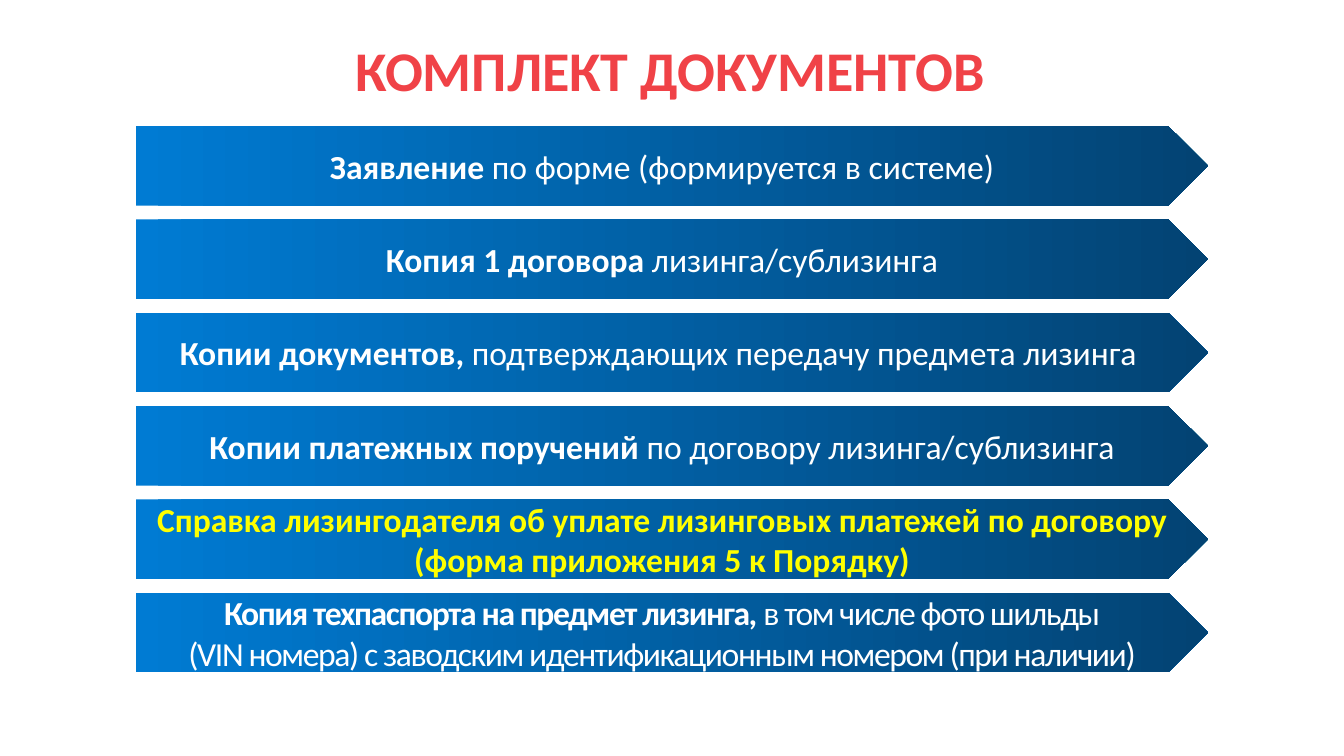
import dataclasses
import typing

import pptx
import pptx.dml.color
import pptx.enum.shapes
import pptx.enum.text
import pptx.slide
import pptx.text.text
import pptx.util

Inches = pptx.util.Inches


@dataclasses.dataclass(frozen=True)
class Theme:
    font: str = "Calibri"
    title: str = "F04247"
    text: str = "FFFFFF"
    accent: str = "FFFF00"
    start: str = "007BD3"
    end: str = "034373"
    large: int = 40
    body: int = 24


class Part(typing.NamedTuple):
    text: str
    bold: bool = False


@dataclasses.dataclass(frozen=True)
class Banner:
    lines: list[list[Part]]
    color: str
    track: int = 0  # hundredths of a point


THEME = Theme()
LEFT, TOP, WIDTH, HEIGHT, PITCH = 1.35, 1.25, 10.63, 0.79, 0.926

BANNERS = [
    Banner([[Part("Заявление", True),
             Part(" по форме (формируется в системе)")]], THEME.text),
    Banner([[Part("Копия 1 договора", True),
             Part(" лизинга/сублизинга")]], THEME.text),
    Banner([[Part("Копии документов, ", True),
             Part("подтверждающих передачу предмета лизинга ")]], THEME.text),
    Banner([[Part("Копии платежных поручений", True),
             Part(" по договору лизинга/сублизинга")]], THEME.text),
    Banner([[Part("Справка лизингодателя об уплате лизинговых платежей по договору "
                  "(форма приложения 5 к Порядку)", True)]], THEME.accent),
    Banner([[Part("Копия техпаспорта на предмет лизинга, ", True),
             Part("в том числе фото шильды")],
            [Part("(VIN номера) с заводским идентификационным номером "
                  "(при наличии)")]], THEME.text, -100),
]


def paint(code: str) -> pptx.dml.color.RGBColor:
    return pptx.dml.color.RGBColor.from_string(code)


def write(frame: pptx.text.text.TextFrame, lines: list[list[Part]],
          size: int, color: str, track: int = 0) -> None:
    frame.word_wrap = True
    frame.vertical_anchor = pptx.enum.text.MSO_ANCHOR.MIDDLE
    for row, parts in enumerate(lines):
        para = frame.add_paragraph() if row else frame.paragraphs[0]
        para.alignment = pptx.enum.text.PP_ALIGN.CENTER
        for part in parts:
            run = para.add_run()
            run.text = part.text
            run.font.name = THEME.font
            run.font.size = pptx.util.Pt(size)
            run.font.bold = part.bold
            run.font.color.rgb = paint(color)
            if track:
                run.font._element.set("spc", str(track))


def add_title(slide: pptx.slide.Slide, text: str) -> None:
    box = slide.shapes.add_textbox(
        Inches(-0.02), Inches(0.22), Inches(13.33), Inches(1))
    write(box.text_frame, [[Part(text, True)]], THEME.large, THEME.title)
    box.text_frame.paragraphs[0].line_spacing = 0.96


def add_banner(slide: pptx.slide.Slide, banner: Banner, index: int) -> None:
    shape = slide.shapes.add_shape(
        pptx.enum.shapes.MSO_SHAPE.PENTAGON, Inches(LEFT),
        Inches(TOP + index * PITCH), Inches(WIDTH), Inches(HEIGHT))
    shape.shadow.inherit = False
    shape.line.fill.background()
    shape.fill.gradient()
    shape.fill.gradient_angle = 0
    for stop, color in zip(shape.fill.gradient_stops, (THEME.start, THEME.end)):
        stop.color.rgb = paint(color)
    write(shape.text_frame, banner.lines, THEME.body, banner.color, banner.track)


def main() -> None:
    deck = pptx.Presentation()
    deck.slide_width, deck.slide_height = Inches(13.33), Inches(7.5)
    slide = deck.slides.add_slide(deck.slide_layouts[6])
    add_title(slide, "КОМПЛЕКТ ДОКУМЕНТОВ")
    for index, banner in enumerate(BANNERS):
        add_banner(slide, banner, index)
    deck.save("out.pptx")


if __name__ == "__main__":
    main()
